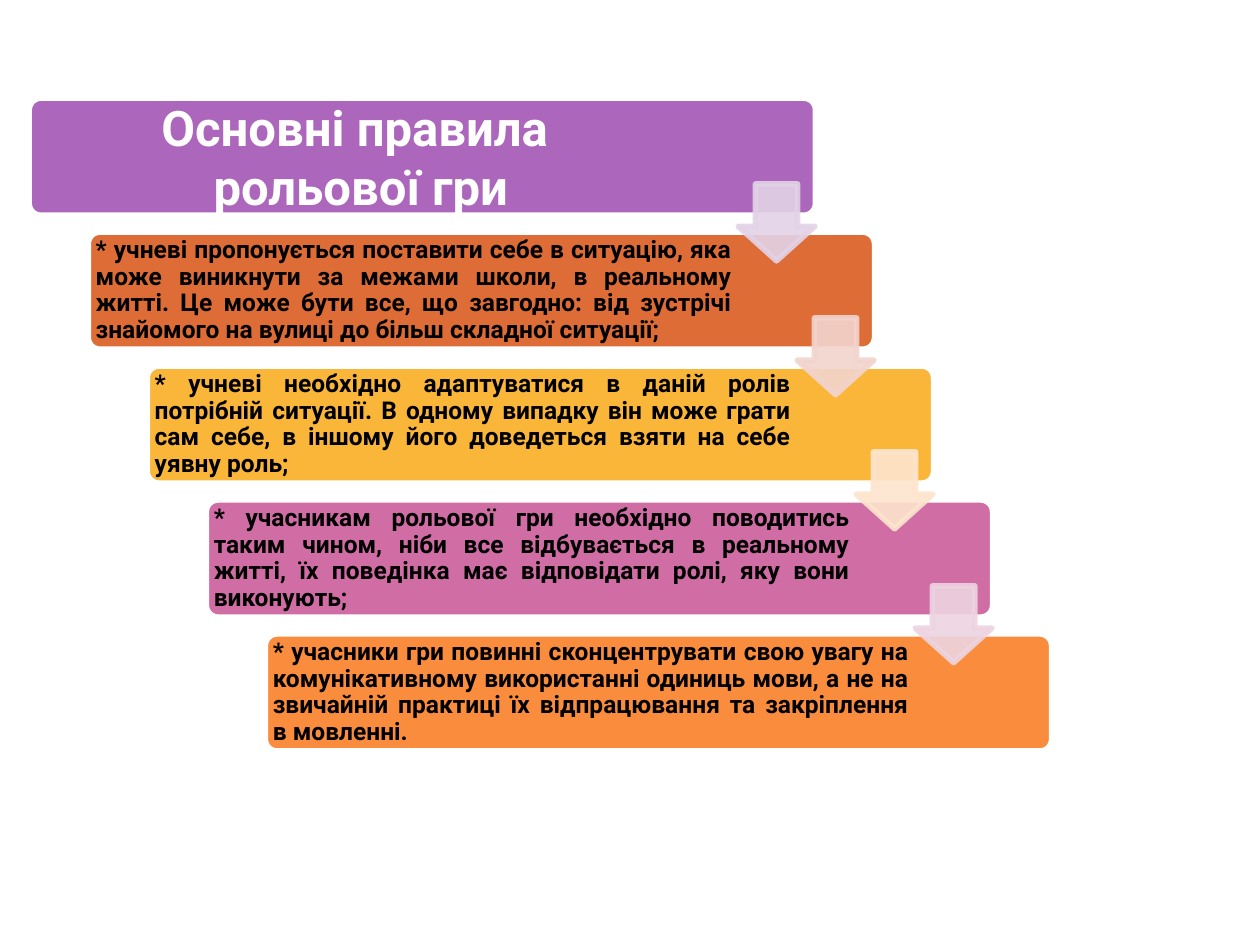
from lxml import etree
from pptx import Presentation
from pptx import util as u
from pptx.dml.color import RGBColor
from pptx.enum import shapes, text
from pptx.oxml.ns import qn

WHITE = RGBColor(0xFF, 0xFF, 0xFF)
BLACK = RGBColor(0x00, 0x00, 0x00)
PURPLE = RGBColor(0xAC, 0x66, 0xBB)
RUST = RGBColor(0xDE, 0x6C, 0x36)
YELLOW = RGBColor(0xF9, 0xB6, 0x39)
PINK = RGBColor(0xCF, 0x6D, 0xA4)
ORANGE = RGBColor(0xFA, 0x8D, 0x3D)
PALE_PURPLE = RGBColor(0xE3, 0xD3, 0xE7)
PALE_RUST = RGBColor(0xF2, 0xD4, 0xCE)
PALE_YELLOW = RGBColor(0xFD, 0xE5, 0xCE)
PALE_PINK = RGBColor(0xED, 0xD4, 0xE0)

# Staircase geometry in centimetres
LEFT, TOP = 0.59, 1.98
STEP_X, STEP_Y = 1.19, 2.7
BAR_WIDTH, BAR_HEIGHT = 15.85, 2.36
TEXT_WIDTH = 13.12
ARROW_DX, ARROW_DY, ARROW_SIZE = 14.29, 1.73, 1.55

TITLE = ["Основні правила", " рольової гри"]
RULES = [
    "* учневі пропонується поставити себе в ситуацію, яка може виникнути за межами школи, "
    "в реальному житті. Це може бути все, що завгодно: від зустрічі знайомого на вулиці "
    "до більш складної ситуації;",
    "* учневі необхідно адаптуватися в даній ролів потрібній ситуації. В одному випадку "
    "він може грати сам себе, в іншому його доведеться взяти на себе уявну роль; ",
    "* учасникам рольової гри необхідно поводитись таким чином, ніби все відбувається "
    "в реальному житті, їх поведінка має відповідати ролі, яку вони виконують;",
    "* учасники гри повинні сконцентрувати свою увагу на комунікативному використанні "
    "одиниць мови, а не на звичайній практиці їх відпрацювання та закріплення в мовленні.",
]
BAR_COLORS = [PURPLE, RUST, YELLOW, PINK, ORANGE]
ARROW_COLORS = [PALE_PURPLE, PALE_RUST, PALE_YELLOW, PALE_PINK]

TITLE_FORMAT = {
    "inset": 0.3,
    "para": {"alignment": text.PP_ALIGN.CENTER},
    "font": {"size": u.Pt(28)},
    "color": WHITE,
}
RULE_FORMAT = {
    "inset": 0.15,
    "para": {"alignment": text.PP_ALIGN.JUSTIFY, "line_spacing": 0.9},
    "font": {"size": u.Pt(14)},
    "color": BLACK,
}


def set_all(target, values):
    for name, value in values.items():
        setattr(target, name, value)


class Staircase:
    font = {"name": "Roboto", "bold": True}
    line_width = u.Pt(3.15)

    def __init__(self, page):
        self.page = page

    def shape(self, kind, left, top, width, height, fill, line, adjustments):
        shape = self.page.shapes.add_shape(
            kind, u.Cm(left), u.Cm(top), u.Cm(width), u.Cm(height))
        shape.shadow.inherit = False
        shape.fill.solid()
        shape.fill.fore_color.rgb = fill
        shape.line.color.rgb = line
        shape.line.width = self.line_width
        for index, value in enumerate(adjustments):
            shape.adjustments[index] = value
        return shape

    def bar(self, left, top, color):
        self.shape(shapes.MSO_SHAPE.ROUNDED_RECTANGLE, left, top,
                   BAR_WIDTH, BAR_HEIGHT, color, WHITE, [0.1])

    def arrow(self, left, top, color):
        arrow = self.shape(shapes.MSO_SHAPE.DOWN_ARROW, left, top,
                           ARROW_SIZE, ARROW_SIZE, color, color, [0.55, 0.45])
        # Fill and outline are slightly transparent
        for color_node in arrow._element.spPr.iter(qn("a:srgbClr")):
            etree.SubElement(color_node, qn("a:alpha"), val="90000")

    def label(self, left, top, lines, style):
        box = self.page.shapes.add_textbox(
            u.Cm(left), u.Cm(top), u.Cm(TEXT_WIDTH), u.Cm(BAR_HEIGHT))
        frame = box.text_frame
        set_all(frame, {"word_wrap": True, "vertical_anchor": text.MSO_ANCHOR.MIDDLE})
        for side in ("left", "top", "right", "bottom"):
            setattr(frame, f"margin_{side}", u.Cm(style["inset"]))
        for index, line in enumerate(lines):
            para = frame.add_paragraph() if index else frame.paragraphs[0]
            set_all(para, style["para"])
            span = para.add_run()
            span.text = line
            set_all(span.font, self.font | style["font"])
            span.font.color.rgb = style["color"]


def main():
    deck = Presentation()
    deck.slide_width, deck.slide_height = u.Cm(25.4), u.Cm(19.05)
    stairs = Staircase(deck.slides.add_slide(deck.slide_layouts[6]))
    corners = [(LEFT + i * STEP_X, TOP + i * STEP_Y) for i in range(len(BAR_COLORS))]

    # Title and rules
    labels = [(TITLE, TITLE_FORMAT)] + [([rule], RULE_FORMAT) for rule in RULES]
    for (left, top), color, (lines, style) in zip(corners, BAR_COLORS, labels):
        stairs.bar(left, top, color)
        stairs.label(left, top, lines, style)

    # Arrows leading from each step to the next
    for (left, top), color in zip(corners, ARROW_COLORS):
        stairs.arrow(left + ARROW_DX, top + ARROW_DY, color)

    deck.save("out.pptx")


if __name__ == "__main__":
    main()
